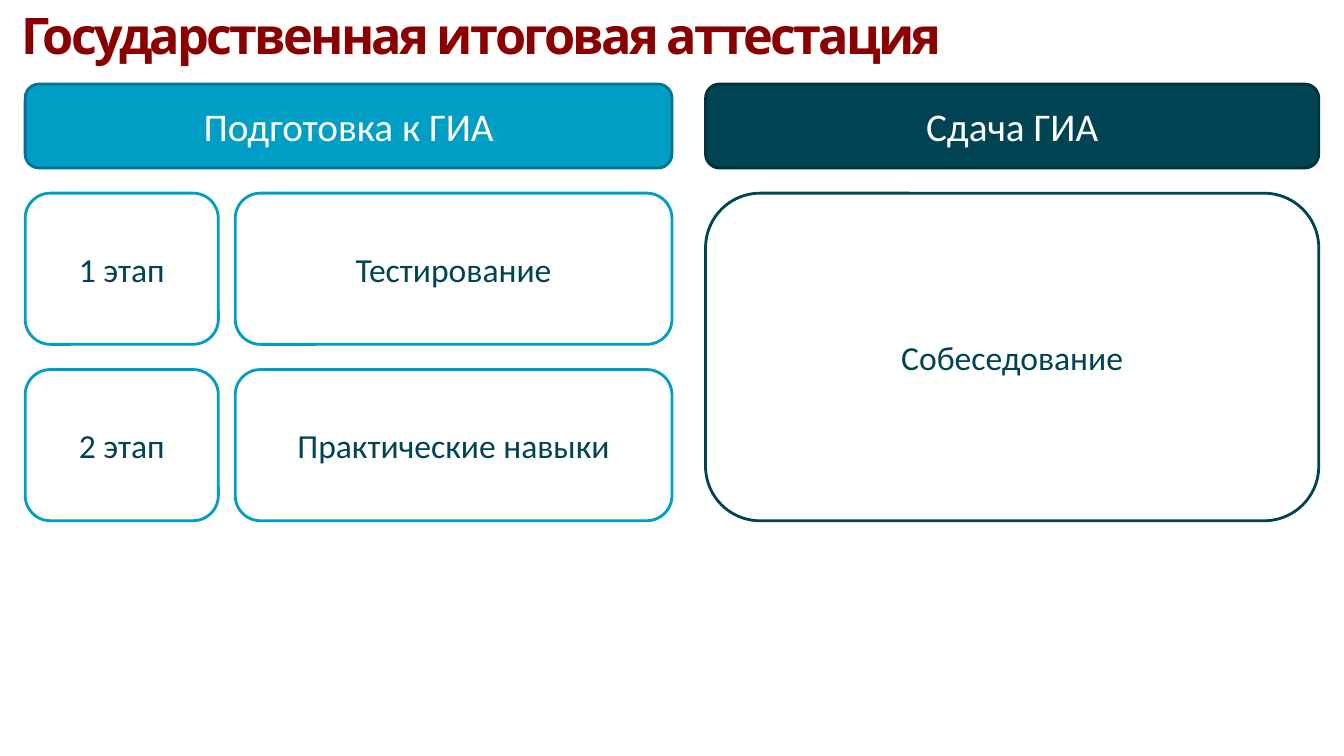
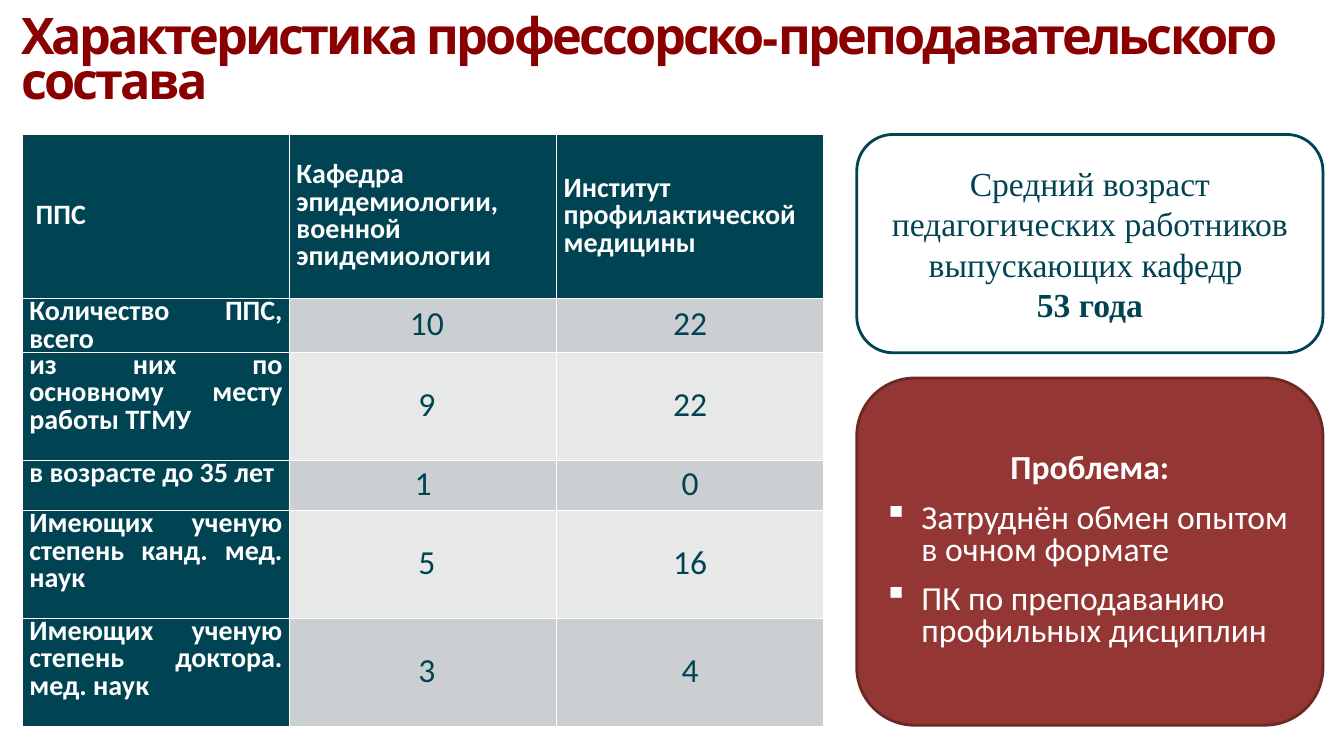
from lxml import etree
from pptx import Presentation
from pptx.dml.color import RGBColor
from pptx.enum import shapes, text
from pptx.oxml import ns
from pptx.util import Pt

WHITE, RED, BRICK, BRICK_EDGE = "FFFFFF", "8A0000", "943634", "6D2826"
BLUE, BLUE_EDGE, TEAL, TEAL_EDGE = "009DC4", "007491", "004353", "00323D"
BANDS = ("CCCFD1", "E7E9E9")
BODY_FONT, TITLE_FONT = "Calibri", "League Spartan"
ALIGN, ANCHOR = text.PP_ALIGN, text.MSO_ANCHOR

EXAM_TITLE = "Государственная итоговая аттестация"
PREPARATION, EXAM = "Подготовка к ГИА", "Сдача ГИА"
STAGES = [("1 этап", "Тестирование"), ("2 этап", "Практические навыки")]
INTERVIEW = "Собеседование"

STAFF_TITLE = "Характеристика профессорско-преподавательского состава"
STAFF = [
    (" ППС", "Кафедра эпидемиологии, военной эпидемиологии",
     "Институт профилактической медицины"),
    ("Количество ППС, всего", " 10", "22"),
    ("из них по основному месту работы ТГМУ", " 9", "22"),
    ("в возрасте до 35 лет", "1", "0"),
    ("Имеющих ученую степень канд. мед. наук", " 5", "16"),
    ("Имеющих ученую степень доктора. мед. наук", " 3", "4"),
]
ROW_HEIGHTS = (117.4, 36, 77, 36, 77, 77)
COLUMN_WIDTH = 190.8
AGE = ("Средний возраст педагогических работников выпускающих кафедр ", "53 года")
PROBLEM = "Проблема:"
PROBLEMS = ["Затруднён обмен опытом в очном формате",
            "ПК по преподаванию профильных дисциплин"]

LEFT, GAP = 18, 18
HEADER_TOP, HEADER_HEIGHT = 60, 60
CARD_TOP, CARD_HEIGHT = 138, 108
STAGE_WIDTH, STAGE_GAP, TASK_WIDTH = 138, 12, 312
EXAM_LEFT, EXAM_WIDTH = 504, 438
STAFF_TOP, PANEL_LEFT, PANEL_WIDTH = 96, 612, 333
AGE_HEIGHT, PROBLEM_HEIGHT = 156, 248


def color(value):
    return RGBColor.from_string(value)


def paint(target, value):
    target.fill.solid()
    target.fill.fore_color.rgb = color(value)


def write(paragraph, words, size, ink, bold=False, font=BODY_FONT,
          align=ALIGN.CENTER, spacing=None, after=None):
    paragraph.add_run().text = words
    paragraph.alignment = align
    paragraph.line_spacing = spacing
    if after is not None:
        paragraph.space_after = Pt(after)
    paragraph.font.name = font
    paragraph.font.size = Pt(size)
    paragraph.font.bold = bold
    paragraph.font.color.rgb = color(ink)


def add_bullet(paragraph, mark="▪", indent=27):
    properties = paragraph._p.get_or_add_pPr()
    properties.set("marL", str(Pt(indent)))
    properties.set("indent", str(-Pt(indent)))
    etree.SubElement(properties, ns.qn("a:buChar")).set("char", mark)


def add_titled_slide(presentation, title):
    slide = presentation.slides.add_slide(presentation.slide_layouts[6])
    frame = slide.shapes.add_textbox(Pt(8), Pt(9.4), Pt(940), Pt(40)).text_frame
    frame.word_wrap = True
    frame.auto_size = text.MSO_AUTO_SIZE.SHAPE_TO_FIT_TEXT
    paragraph = frame.paragraphs[0]
    write(paragraph, title, 36, RED, True, TITLE_FONT, ALIGN.LEFT, 0.75)
    paragraph._p.get_or_add_pPr().get_or_add_defRPr().set("spc", "-200")
    return slide


def add_card(slide, box, fill, edge, words=None, size=24, ink=TEAL):
    shape = slide.shapes.add_shape(
        shapes.MSO_SHAPE.ROUNDED_RECTANGLE, *map(Pt, box))
    shape.shadow.inherit = False
    paint(shape, fill)
    shape.line.color.rgb = color(edge)
    shape.line.width = Pt(2)
    frame = shape.text_frame
    frame.word_wrap = True
    frame.vertical_anchor = ANCHOR.MIDDLE
    if words:
        write(frame.paragraphs[0], words, size, ink)
    return frame


def build_exam(presentation):
    slide = add_titled_slide(presentation, EXAM_TITLE)
    task_left = LEFT + STAGE_WIDTH + STAGE_GAP
    left_width = STAGE_WIDTH + STAGE_GAP + TASK_WIDTH
    add_card(slide, (LEFT, HEADER_TOP, left_width, HEADER_HEIGHT),
             BLUE, BLUE_EDGE, PREPARATION, 28, WHITE)
    add_card(slide, (EXAM_LEFT, HEADER_TOP, EXAM_WIDTH, HEADER_HEIGHT),
             TEAL, TEAL_EDGE, EXAM, 28, WHITE)
    for row, (stage, task) in enumerate(STAGES):
        top = CARD_TOP + row * (CARD_HEIGHT + GAP)
        add_card(slide, (LEFT, top, STAGE_WIDTH, CARD_HEIGHT), WHITE, BLUE, stage)
        add_card(slide, (task_left, top, TASK_WIDTH, CARD_HEIGHT), WHITE, BLUE, task)
    height = len(STAGES) * (CARD_HEIGHT + GAP) - GAP
    add_card(slide, (EXAM_LEFT, CARD_TOP, EXAM_WIDTH, height), WHITE, TEAL, INTERVIEW)


def add_staff_table(slide):
    columns = len(STAFF[0])
    table = slide.shapes.add_table(
        len(STAFF), columns, Pt(16), Pt(STAFF_TOP),
        Pt(COLUMN_WIDTH * columns), Pt(sum(ROW_HEIGHTS))).table
    for column in table.columns:
        column.width = Pt(COLUMN_WIDTH)
    for row, values in enumerate(STAFF):
        table.rows[row].height = Pt(ROW_HEIGHTS[row])
        for column, value in enumerate(values):
            cell = table.cell(row, column)
            label = row == 0 or column == 0
            cell.margin_left = cell.margin_right = Pt(5)
            cell.margin_top = cell.margin_bottom = 0
            cell.vertical_anchor = (
                ANCHOR.TOP if row and column == 0 else ANCHOR.MIDDLE)
            paint(cell, TEAL if label else BANDS[(row - 1) % 2])
            write(cell.text_frame.paragraphs[0], value, 20 if label else 24,
                  WHITE if label else TEAL, label, spacing=0.8,
                  align=ALIGN.JUSTIFY if label else ALIGN.CENTER)


def build_staff(presentation):
    slide = add_titled_slide(presentation, STAFF_TITLE)
    add_staff_table(slide)
    age = add_card(slide, (PANEL_LEFT, STAFF_TOP, PANEL_WIDTH, AGE_HEIGHT), WHITE, TEAL)
    caption, value = AGE
    write(age.paragraphs[0], caption, 24, TEAL, font="Times New Roman")
    write(age.add_paragraph(), value, 24, TEAL, True, "Times New Roman")
    top = STAFF_TOP + AGE_HEIGHT + GAP
    problem = add_card(slide, (PANEL_LEFT, top, PANEL_WIDTH, PROBLEM_HEIGHT),
                       BRICK, BRICK_EDGE)
    write(problem.paragraphs[0], PROBLEM, 24, WHITE, True, spacing=0.8, after=12)
    for item in PROBLEMS:
        paragraph = problem.add_paragraph()
        add_bullet(paragraph)
        write(paragraph, item, 24, WHITE, align=ALIGN.LEFT, spacing=0.8, after=12)


def main():
    """Build the exam and teaching staff slides."""
    presentation = Presentation()
    presentation.slide_width, presentation.slide_height = Pt(960), Pt(540)
    build_exam(presentation)
    build_staff(presentation)
    presentation.save("out.pptx")


if __name__ == "__main__":
    main()
